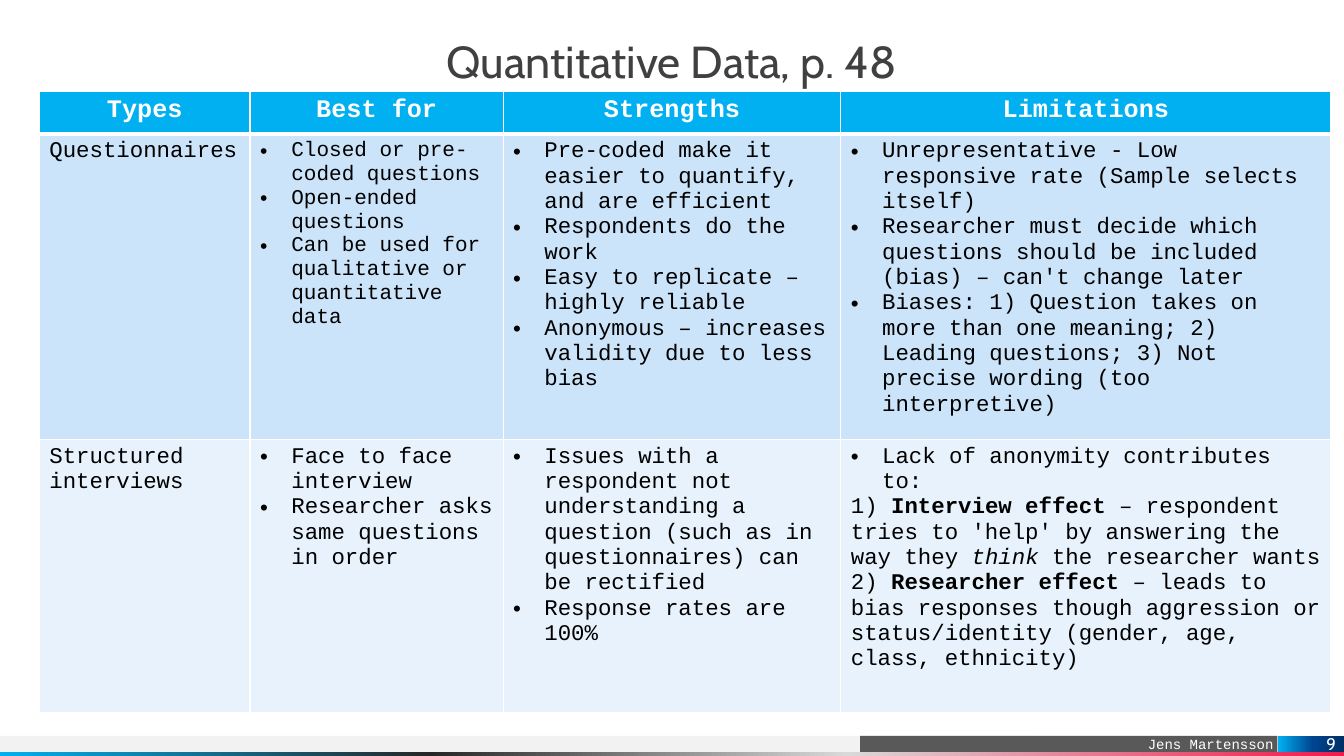
from dataclasses import dataclass

from lxml.etree import SubElement
from pptx import Presentation
from pptx.dml.color import RGBColor
from pptx.enum.shapes import MSO_SHAPE as Shape
from pptx.enum.text import MSO_ANCHOR as Anchor, MSO_AUTO_SIZE as AutoSize, PP_ALIGN as Align
from pptx.oxml.ns import qn
from pptx.util import Inches, Length, Pt

SLIDE_WIDTH, SLIDE_HEIGHT = Inches(13.33), Inches(7.5)
BODY_FONT, TITLE_FONT = "Courier New", "Cabin"
WHITE, BLACK, SKY = "FFFFFF", "000000", "00B0F0"
INDENT = Inches(0.31)

# Shares of the slide's width and height, in percent
TABLE_LEFT, TABLE_TOP = 2.93, 12.13
COLUMN_SHARES = (15.68, 18.83, 25.13, 36.46)
ROW_SHARES = (5.6, 40.4, 36.13)
ROW_FILLS = (SKY, "CCE4F9", "E7F2FC")


@dataclass(frozen=True)
class Span:
    text: str
    bold: bool = False
    italic: bool = False


@dataclass(frozen=True)
class Item:
    spans: tuple[Span, ...]
    bullet: bool = False


@dataclass(frozen=True)
class Cell:
    items: tuple[Item, ...]
    size: float = 16
    color: str = BLACK
    align: Align = Align.LEFT


@dataclass(frozen=True)
class Bar:
    area: tuple[float, float, float, float]
    fill: str = ""
    stops: tuple[tuple[int, str], ...] = ()
    text: str = ""
    size: float = 10
    font: str = BODY_FONT
    anchor: Anchor = Anchor.BOTTOM
    insets: tuple[float, float] = (0, 0)


def plain(text: str) -> Cell:
    return Cell((Item((Span(text),)),))


def header(text: str) -> Cell:
    return Cell((Item((Span(text, bold=True),)),), 18, WHITE, Align.CENTER)


def bullets(*texts: str, size: float = 16) -> Cell:
    return Cell(tuple(Item((Span(text),), bullet=True) for text in texts), size)


BARS = (
    Bar((0, 97.33, 77.1, 2.13), fill="F2F2F2"),
    Bar((64, 97.33, 31.05, 2.13), fill="595959", text="Jens Martensson", insets=(0.1, 0.04)),
    Bar((0, 99.47, 100, 0.53),
        stops=((0, "F2194A"), (37, "D9D9D9"), (68, "262626"), (100, SKY))),
    Bar((95.1, 97.33, 4.9, 2.13), stops=((0, "003065"), (47, "004490"), (100, SKY)),
        text="9", size=12, font=TITLE_FONT, anchor=Anchor.MIDDLE, insets=(0, 0.08)),
)

EFFECTS = Cell((
    Item((Span("Lack of anonymity contributes to:"),), bullet=True),
    Item((Span("1) "), Span("Interview effect", bold=True),
          Span(" – respondent tries to 'help' by answering the way they "),
          Span("think ", italic=True), Span("the researcher wants"))),
    Item((Span("2) "), Span("Researcher effect", bold=True),
          Span(" – leads to bias responses though aggression or status/identity "
               "(gender, age, class, ethnicity)"))),
))

ROWS = (
    tuple(map(header, ("Types", "Best for", "Strengths", "Limitations"))),
    (
        plain("Questionnaires"),
        bullets("Closed or pre-coded questions", "Open-ended questions",
                "Can be used for qualitative or quantitative data", size=15),
        bullets("Pre-coded make it easier to quantify, and are efficient",
                "Respondents do the work",
                "Easy to replicate – highly reliable",
                "Anonymous – increases validity due to less bias"),
        bullets("Unrepresentative - Low responsive rate (Sample selects itself)",
                "Researcher must decide which questions should be included (bias) "
                "– can't change later",
                "Biases: 1) Question takes on more than one meaning; 2) Leading questions; "
                "3) Not precise wording (too interpretive)"),
    ),
    (
        plain("Structured interviews"),
        bullets("Face to face interview", "Researcher asks same questions in order"),
        bullets("Issues with a respondent not understanding a question "
                "(such as in questionnaires) can be rectified",
                "Response rates are 100%"),
        EFFECTS,
    ),
)


def across(percent: float) -> Length:
    return Length(round(SLIDE_WIDTH * percent / 100))


def down(percent: float) -> Length:
    return Length(round(SLIDE_HEIGHT * percent / 100))


def place(left: float, top: float, width: float, height: float) -> tuple[Length, ...]:
    return across(left), down(top), across(width), down(height)


def rgb(color: str) -> RGBColor:
    return RGBColor.from_string(color)


def write(para, text: str, *, size: float, color: str, font: str = BODY_FONT,
          bold: bool = False, italic: bool = False) -> None:
    run = para.add_run()
    run.text = text
    run.font.size, run.font.name = Pt(size), font
    run.font.bold, run.font.italic = bold, italic
    run.font.color.rgb = rgb(color)


def add_bullet(para) -> None:
    properties = para._p.get_or_add_pPr()
    properties.set("marL", str(INDENT))
    properties.set("indent", str(-INDENT))
    SubElement(properties, qn("a:buFont"), typeface="Arial")
    SubElement(properties, qn("a:buChar"), char="•")


def fill_gradient(shape, stops: tuple[tuple[int, str], ...]) -> None:
    shape.fill.gradient()
    shape.fill.gradient_angle = 180
    stop_list = shape.element.spPr.find(".//" + qn("a:gsLst"))
    for old_stop in list(stop_list):
        stop_list.remove(old_stop)
    for position, color in stops:
        stop = SubElement(stop_list, qn("a:gs"), pos=str(position * 1000))
        SubElement(stop, qn("a:srgbClr"), val=color)


def add_bar(slide, bar: Bar) -> None:
    shape = slide.shapes.add_shape(Shape.RECTANGLE, *place(*bar.area))
    shape.shadow.inherit = False
    shape.line.fill.background()
    if bar.stops:
        fill_gradient(shape, bar.stops)
    else:
        shape.fill.solid()
        shape.fill.fore_color.rgb = rgb(bar.fill)
    if bar.text:
        frame = shape.text_frame
        frame.margin_top = frame.margin_bottom = 0
        frame.margin_left, frame.margin_right = map(Inches, bar.insets)
        frame.vertical_anchor = bar.anchor
        para = frame.paragraphs[0]
        para.alignment = Align.RIGHT
        write(para, bar.text, size=bar.size, color=WHITE, font=bar.font)


def set_borders(cell, **widths: float) -> None:
    properties = cell._tc.get_or_add_tcPr()
    for side, width in widths.items():
        line = SubElement(properties, qn("a:ln" + side), w=str(Pt(width)))
        SubElement(SubElement(line, qn("a:solidFill")), qn("a:srgbClr"), val=WHITE)


def fill_cell(cell, content: Cell, fill: str) -> None:
    cell.fill.solid()
    cell.fill.fore_color.rgb = rgb(fill)
    frame = cell.text_frame
    for index, item in enumerate(content.items):
        para = frame.add_paragraph() if index else frame.paragraphs[0]
        para.alignment = content.align
        if item.bullet:
            add_bullet(para)
        for span in item.spans:
            write(para, span.text, size=content.size, color=content.color,
                  bold=span.bold, italic=span.italic)


def add_comparison(slide) -> None:
    area = place(TABLE_LEFT, TABLE_TOP, sum(COLUMN_SHARES), sum(ROW_SHARES))
    table = slide.shapes.add_table(len(ROWS), len(COLUMN_SHARES), *area).table
    table.horz_banding = False
    for column, share in zip(table.columns, COLUMN_SHARES):
        column.width = across(share)
    for index, (row, share, fill) in enumerate(zip(table.rows, ROW_SHARES, ROW_FILLS)):
        row.height = down(share)
        for cell, content in zip(row.cells, ROWS[index]):
            set_borders(cell, L=1, R=1, T=3 if index == 1 else 1, B=3 if index == 0 else 1)
            fill_cell(cell, content, fill)


def add_title(slide, text: str) -> None:
    title = slide.shapes.title
    title.left, title.top, title.width, title.height = place(2.93, 5.2, 94.15, 7.87)
    frame = title.text_frame
    frame.auto_size, frame.word_wrap, frame.vertical_anchor = AutoSize.NONE, True, Anchor.TOP
    frame.margin_left = frame.margin_right = frame.margin_top = frame.margin_bottom = 0
    para = frame.paragraphs[0]
    para.alignment, para.line_spacing = Align.CENTER, 0.9
    write(para, text, size=32, color="404040", font=TITLE_FONT)


def main() -> None:
    deck = Presentation()
    deck.slide_width, deck.slide_height = SLIDE_WIDTH, SLIDE_HEIGHT
    slide = deck.slides.add_slide(deck.slide_layouts[5])
    for bar in BARS:
        add_bar(slide, bar)
    add_title(slide, "Quantitative Data, p. 48")
    add_comparison(slide)
    deck.save("out.pptx")


if __name__ == "__main__":
    main()
